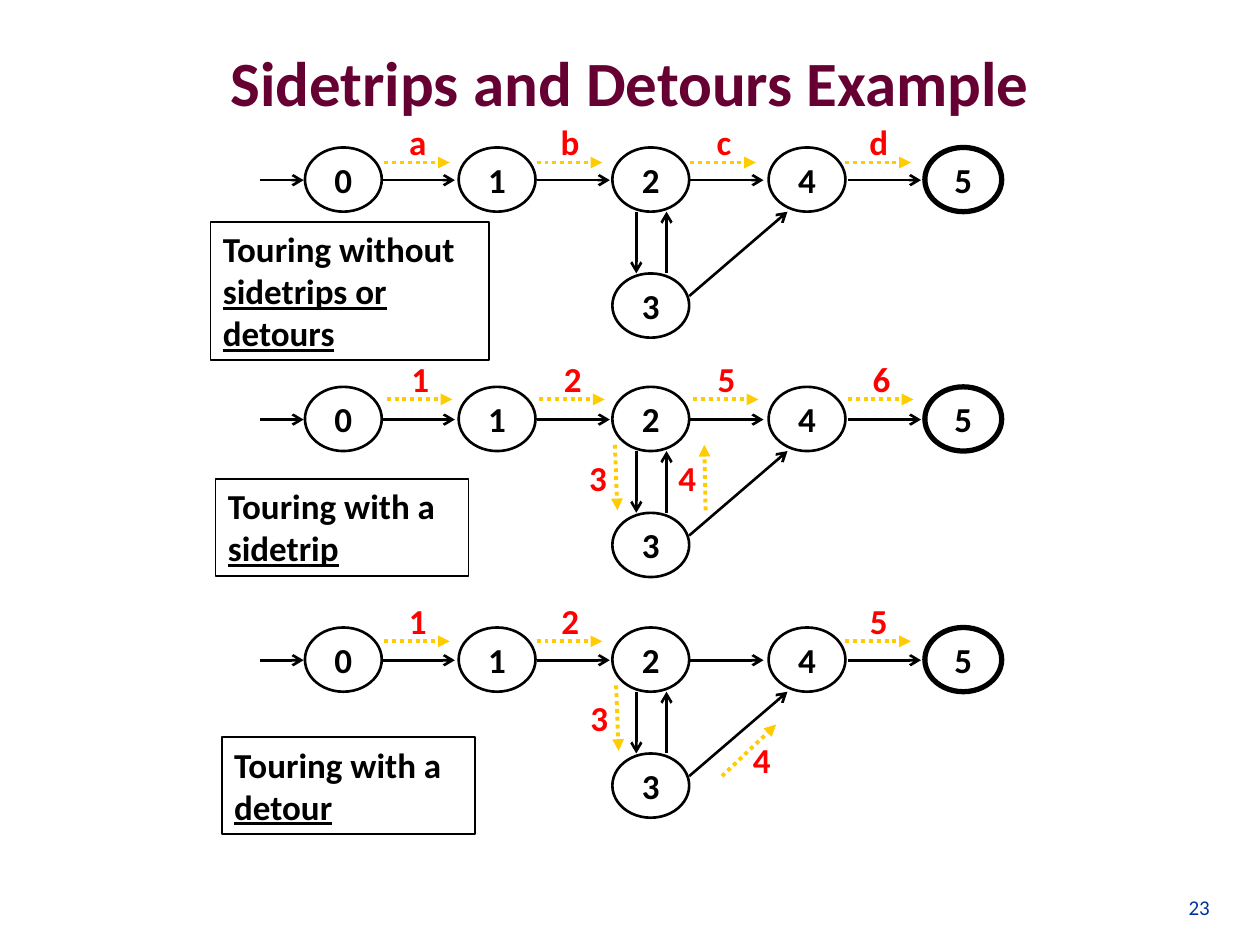
import pptx
import pptx.util
import pptx.dml.color
import pptx.enum.dml
import pptx.enum.shapes
import pptx.enum.text
import lxml.etree

Inches = pptx.util.Inches
Pt = pptx.util.Pt
Kind = pptx.enum.shapes.MSO_SHAPE
Align = pptx.enum.text.PP_ALIGN
Anchor = pptx.enum.text.MSO_ANCHOR
BLACK, RED, GOLD = "000000", "FF0000", "FFCC00"

deck = pptx.Presentation()
deck.slide_width = Inches(10)
deck.slide_height = Inches(7.5)
slide = deck.slides.add_slide(deck.slide_layouts[6])


def put(at, runs, size=20, hue=BLACK, bold=True, align=Align.CENTER,
        anchor=Anchor.TOP, kind=None, width=1.5):
    place = [Inches(n) for n in at]
    if kind is None:
        item = slide.shapes.add_textbox(*place)
    else:
        item = slide.shapes.add_shape(kind, *place)
        item.shadow.inherit = False
        item.fill.background()
        item.line.color.rgb = pptx.dml.color.RGBColor.from_string(BLACK)
        item.line.width = Pt(width)
    frame = item.text_frame
    frame.word_wrap = True
    frame.vertical_anchor = anchor
    if kind == Kind.OVAL:
        frame.margin_left = frame.margin_right = 0
        frame.margin_top = frame.margin_bottom = 0
    para = frame.paragraphs[0]
    para.alignment = align
    for text, under in runs:
        run = para.add_run()
        run.text = text
        run.font.name = "Calibri"
        run.font.size = Pt(size)
        run.font.bold = bold
        run.font.underline = under
        run.font.color.rgb = pptx.dml.color.RGBColor.from_string(hue)


def draw(ends, hue=BLACK, width=1.5, tip="arrow", dots=False):
    line = slide.shapes.add_connector(
        pptx.enum.shapes.MSO_CONNECTOR.STRAIGHT, *[Inches(n) for n in ends])
    line.line.color.rgb = pptx.dml.color.RGBColor.from_string(hue)
    line.line.width = Pt(width)
    if dots:
        line.line.dash_style = pptx.enum.dml.MSO_LINE.ROUND_DOT
    ns = pptx.oxml.ns.qn
    lxml.etree.SubElement(line.line._get_or_add_ln(), ns("a:tailEnd"), type=tip)
    lxml.etree.SubElement(line._element.spPr, ns("a:effectLst"))


put((0.5, 0.02, 9, 1.25), [("Sidetrips and Detours Example", False)],
    size=36, hue="660033", anchor=Anchor.MIDDLE)
put((9.01, 6.83, 0.69, 0.52), [("23", False)], size=12, hue="003399",
    bold=False, align=Align.RIGHT, anchor=Anchor.BOTTOM)

nodes = [("0", 2.42, 0), ("1", 3.64, 0), ("2", 4.86, 0),
         ("3", 4.86, 1), ("4", 6.1, 0), ("5", 7.34, 0)]
edges = [(2.06, 0.26, 2.41, 0.26), (3.03, 0.26, 3.61, 0.26),
         (4.26, 0.26, 4.84, 0.26), (5.48, 0.26, 6.06, 0.26),
         (6.73, 0.26, 7.31, 0.26), (5.05, 0.51, 5.05, 1),
         (5.29, 1, 5.29, 0.51), (5.47, 1.18, 6.25, 0.51)]
for top in (1.17, 3.07, 4.98):
    for name, left, down in nodes:
        put((left, top + down, 0.61, 0.51), [(name, False)],
            anchor=Anchor.MIDDLE, kind=Kind.OVAL,
            width=3 if name == "5" else 1.5)
    for x1, y1, x2, y2 in edges:
        draw((x1, top + y1, x2, top + y2))

notes = [((1.67, 1.76, 2.21, 1.1), "Touring without ", "sidetrips or detours"),
         ((1.71, 3.8, 2.01, 0.77), "Touring with a ", "sidetrip"),
         ((1.76, 5.85, 2.01, 0.77), "Touring with a ", "detour")]
for at, lead, term in notes:
    put(at, [(lead, False), (term, True)], align=Align.LEFT,
        kind=Kind.RECTANGLE, width=1)

steps = [("3", (4.88, 3.53, 4.9, 4.05), 4.55, 3.57),
         ("4", (5.6, 4.05, 5.59, 3.53), 5.26, 3.57),
         ("3", (4.89, 5.44, 4.91, 5.96), 4.56, 5.48),
         ("4", (5.73, 6.16, 6.16, 5.75), 5.85, 5.81)]
for names, shift, y in (("abcd", 0, 1.29), ("1256", 0.02, 3.17), ("12 5", 0, 5.09)):
    for name, x in zip(names, (3.05, 4.26, 5.48, 6.71)):
        if name != " ":
            x += shift
            steps.append((name, (x, y, x + 0.52, y), x + 0.07, y - 0.38))
for name, ends, left, top in steps:
    draw(ends, GOLD, 2.25, "triangle", True)
    put((left, top, 0.39, 0.43), [(name, False)], hue=RED)

deck.save("out.pptx")
